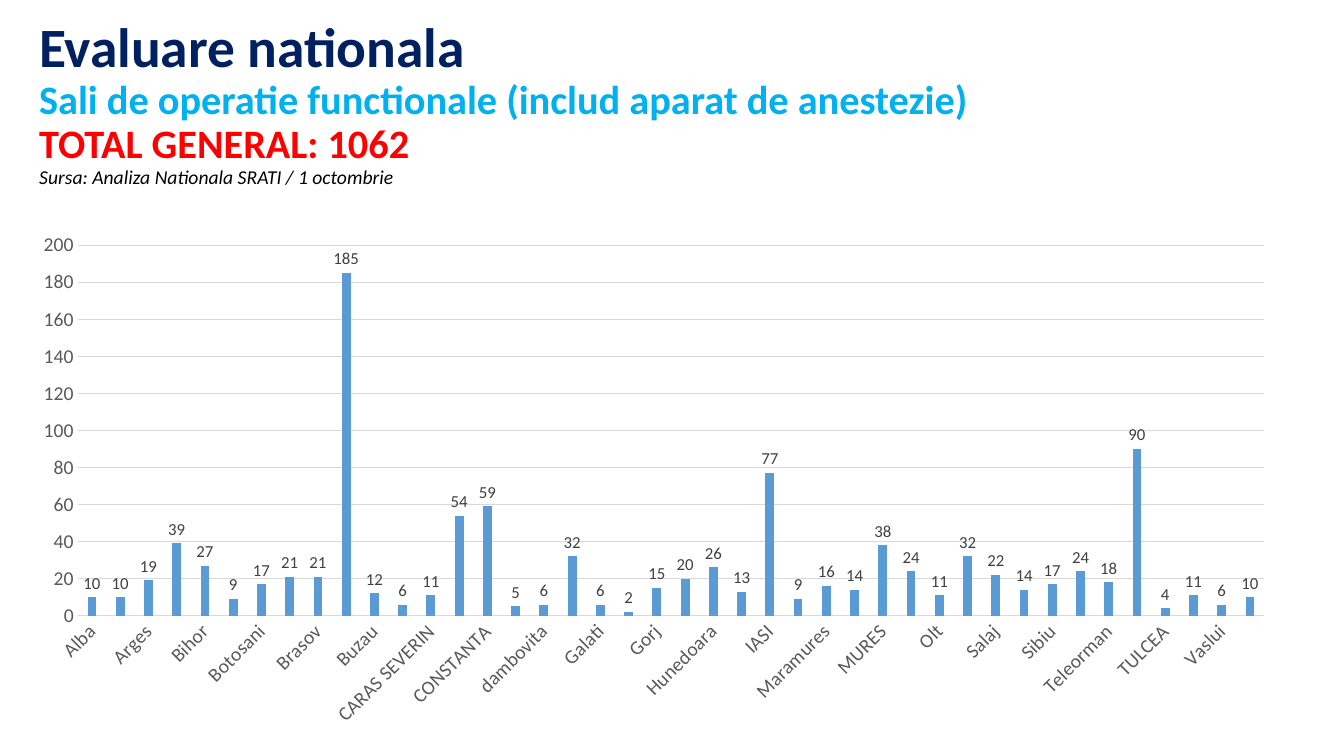
from pptx import Presentation
from pptx.chart.data import CategoryChartData
from pptx.dml.color import RGBColor
from pptx.enum.chart import XL_CHART_TYPE, XL_LABEL_POSITION, XL_TICK_MARK
from pptx.enum.text import MSO_ANCHOR
from pptx.util import Emu, Pt

COLUMNS = XL_CHART_TYPE.COLUMN_CLUSTERED
OUTSIDE_END = XL_LABEL_POSITION.OUTSIDE_END
NO_TICK = XL_TICK_MARK.NONE
MIDDLE, TOP = MSO_ANCHOR.MIDDLE, MSO_ANCHOR.TOP

NAVY = RGBColor(0x00, 0x20, 0x60)
SKY = RGBColor(0x00, 0xB0, 0xF0)
RED = RGBColor(0xFF, 0x00, 0x00)
BLACK = RGBColor(0x00, 0x00, 0x00)
BAR_BLUE = RGBColor(0x5B, 0x9B, 0xD5)
AXIS_GREY = RGBColor(0x59, 0x59, 0x59)
LABEL_GREY = RGBColor(0x40, 0x40, 0x40)
LINE_GREY = RGBColor(0xD9, 0xD9, 0xD9)

OPERATING_ROOMS = {
    "Alba": 10, "Arad": 10, "Arges": 19, "Bacau": 39, "Bihor": 27,
    "BISTRITA NASAUD": 9, "Botosani": 17, "BRAILA": 21, "Brasov": 21,
    "BUCURESTI": 185, "Buzau": 12, "Calarasi": 6, "CARAS SEVERIN": 11,
    "Cluj": 54, "CONSTANTA": 59, "Covasna": 5, "dambovita": 6, "Dolj": 32,
    "Galati": 6, "GIURGIU": 2, "Gorj": 15, "Harghita": 20, "Hunedoara": 26,
    "Ialomita": 13, "IASI": 77, "Ilfov": 9, "Maramures": 16,
    "Mehedinti": 14, "MURES": 38, "NEAMT": 24, "Olt": 11, "PRAHOVA": 32,
    "Salaj": 22, "Satu Mare": 14, "Sibiu": 17, "Suceava": 24,
    "Teleorman": 18, "TIMIS": 90, "TULCEA": 4, "Valcea": 11, "Vaslui": 6,
    "VRANCEA": 10,
}


class SlideBuilder:
    """Hold the font, the scale and the current slide, and add elements to it."""

    FONT = "Calibri"
    PX = 9144

    def __init__(self, presentation):
        self.slide = presentation.slides.add_slide(presentation.slide_layouts[6])

    def box(self, *lengths):
        return [Emu(length * self.PX) for length in lengths]

    def style(self, font, size, color, bold=False, italic=False):
        font.name, font.size = self.FONT, Pt(size)
        font.bold, font.italic = bold, italic
        font.color.rgb = color

    def text(self, bounds, lines, anchor=TOP, spacing=1.0, wrap=True, **emphasis):
        frame = self.slide.shapes.add_textbox(*self.box(*bounds)).text_frame
        frame.word_wrap = wrap
        frame.vertical_anchor = anchor
        paragraph = frame.paragraphs[0]
        paragraph.line_spacing = spacing
        for index, (words, size, color) in enumerate(lines):
            if index:
                paragraph.add_line_break()
            run = paragraph.add_run()
            run.text = words
            self.style(run.font, size, color, **emphasis)

    def axis(self, axis):
        axis.major_tick_mark = axis.minor_tick_mark = NO_TICK
        self.style(axis.tick_labels.font, 14, AXIS_GREY)

    def line(self, line):
        line.color.rgb = LINE_GREY
        line.width = Pt(0.75)

    def column_chart(self, bounds, name, values):
        data = CategoryChartData()
        data.categories = list(values)
        data.add_series(name, list(values.values()))
        chart = self.slide.shapes.add_chart(COLUMNS, *self.box(*bounds), data).chart
        chart.has_legend = chart.has_title = False
        self.style(chart.font, 10, BLACK)

        counties, rooms = chart.category_axis, chart.value_axis
        self.axis(counties)
        self.line(counties.format.line)
        counties._element.txPr.bodyPr.set("rot", "-2700000")
        self.axis(rooms)
        rooms.format.line.fill.background()
        rooms.minimum_scale, rooms.maximum_scale, rooms.major_unit = 0, 200, 20
        self.line(rooms.major_gridlines.format.line)

        plot = chart.plots[0]
        plot.gap_width, plot.overlap = 219, -27
        plot.vary_by_categories = False
        fill = plot.series[0].format.fill
        fill.solid()
        fill.fore_color.rgb = BAR_BLUE
        plot.has_data_labels = True
        labels = plot.data_labels
        labels.show_value = True
        labels.position = OUTSIDE_END
        self.style(labels.font, 12, LABEL_GREY)


def main():
    presentation = Presentation()
    presentation.slide_width = Emu(1333 * SlideBuilder.PX)
    presentation.slide_height = Emu(750 * SlideBuilder.PX)
    builder = SlideBuilder(presentation)
    builder.text((29, 20, 1150, 145), [
        ("Evaluare nationala", 39.6, NAVY),
        ("Sali de operatie functionale (includ aparat de anestezie)", 28.8, SKY),
        ("TOTAL GENERAL: 1062", 28.8, RED),
    ], anchor=MIDDLE, spacing=0.9, bold=True)
    builder.column_chart((18, 221, 1261, 510), "Series 1", OPERATING_ROOMS)
    builder.text((29, 159, 375, 34), [
        ("Sursa: Analiza Nationala SRATI / 1 octombrie", 14, BLACK),
    ], wrap=False, italic=True)
    presentation.save("out.pptx")


if __name__ == "__main__":
    main()
